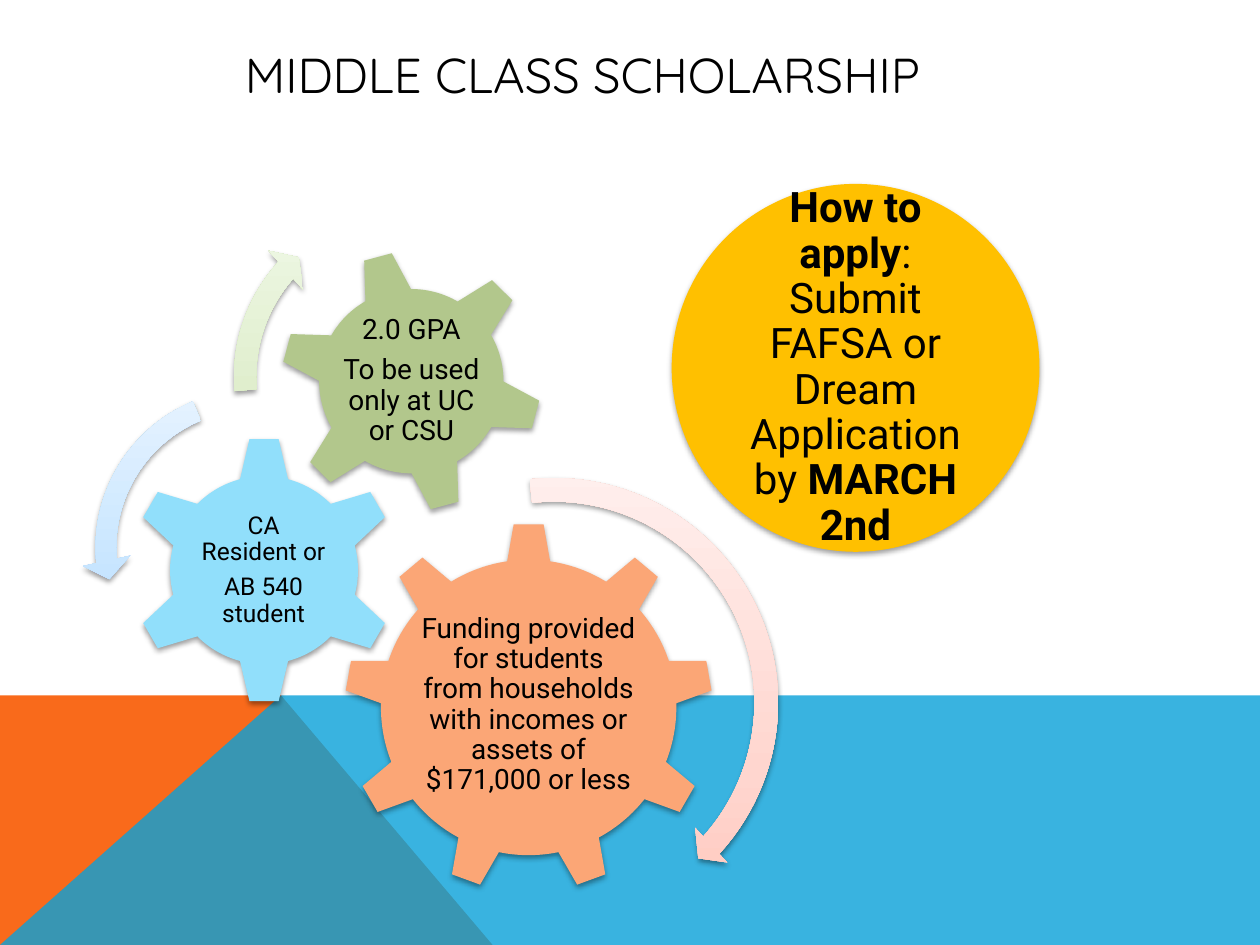
from dataclasses import dataclass

from lxml import etree
from pptx import Presentation
from pptx.dml.color import RGBColor
from pptx.enum.shapes import MSO_SHAPE
from pptx.enum.text import MSO_ANCHOR, PP_ALIGN
from pptx.oxml.ns import qn
from pptx.util import Pt

CENTER = PP_ALIGN.CENTER
MIDDLE = MSO_ANCHOR.MIDDLE
GEAR_6, GEAR_9 = MSO_SHAPE.GEAR_6, MSO_SHAPE.GEAR_9
ARROW_RIGHT = MSO_SHAPE.CIRCULAR_ARROW
ARROW_LEFT = MSO_SHAPE.LEFT_CIRCULAR_ARROW
OVAL = MSO_SHAPE.OVAL

WIDTH, HEIGHT = 720, 540
COLORS = {
    "text": "000000",
    "shadow": "000000",
    "orange band": "F96A1B",
    "blue band": "08A1D9",
    "orange gear": "FBA676",
    "blue gear": "91DFFB",
    "green gear": "B2C78C",
    "circle": "FFC000",
}
GRADIENT_STOPS = (0, 35, 100)
GRADIENTS = {
    "pink": ("FFC5BA", "FFD6CF", "FFEFED"),
    "blue": ("ABD8FF", "C3E3FF", "E8F4FF"),
    "green": ("CDE6AF", "DCECC7", "F1F9E9"),
}


@dataclass
class Disc:
    """A square-framed shape."""
    kind: int
    left: float
    top: float
    size: float
    color: str
    rotation: float = 0


@dataclass
class Label:
    """Paragraphs of (text, bold) runs in a box."""
    left: float
    top: float
    width: float
    height: float
    font_size: float
    paragraphs: list
    inset: float = 1.5


@dataclass
class Arrow:
    kind: int
    left: float
    top: float
    size: float
    gradient: str
    adjustments: tuple


GEARS = [
    (Disc(GEAR_9, 196.6, 298.8, 211, "orange gear"),
     Label(239, 348.5, 126, 108.7, 16,
           [[("Funding provided for students from households with incomes "
              "or assets of $171,000 or less", False)]])),
    (Disc(GEAR_6, 74.2, 249.1, 153.4, "blue gear"),
     Label(112.5, 288, 76.3, 75.6, 14,
           [[("CA Resident or", False)], [("AB 540 student", False)]])),
    (Disc(GEAR_6, 159.8, 142.6, 150.5, "green gear", 345),
     Label(193, 175.7, 84.2, 84.2, 16,
           [[("2.0 GPA", False)], [("To be used only at UC or CSU", False)]])),
]
ARROWS = [
    Arrow(ARROW_RIGHT, 181.4, 266.4, 270, "pink", (0.05, 2.99, 25.3, 158.31, 0.05)),
    Arrow(ARROW_LEFT, 46.8, 214.6, 196.6, "blue", (0.06, 4.3, 104.89, 148.38, 0.07)),
    Arrow(ARROW_RIGHT, 125.3, 109.4, 211.7, "green", (0.06, 3.94, 133.14, 105.08, 0.07)),
]
CIRCLE = (
    Disc(OVAL, 383.8, 105.1, 210.2, "circle"),
    Label(414.7, 136.1, 148.3, 148.3, 24,
          [[("How to apply", True),
            (": Submit FAFSA or Dream Application by ", False),
            ("MARCH 2nd", True)]], 2.2),
)


def add_color(parent, color: str, alpha: int = 100) -> None:
    node = etree.SubElement(parent, qn("a:srgbClr"), val=color)
    if alpha < 100:
        etree.SubElement(node, qn("a:alpha"), val=str(alpha * 1000))


def add_shadow(shape) -> None:
    shape.shadow.inherit = False
    effects = shape.element.spPr.find(qn("a:effectLst"))
    shadow = etree.SubElement(
        effects, qn("a:outerShdw"), blurRad=str(Pt(3.1)), dist=str(Pt(1.6)),
        dir=str(90 * 60000), rotWithShape="0")
    add_color(shadow, COLORS["shadow"], 38)


def add_band(slide, points: list, color: str, alpha: int = 100) -> None:
    corners = [(Pt(x), Pt(y)) for x, y in points]
    builder = slide.shapes.build_freeform(*corners[0])
    builder.add_line_segments(corners[1:], close=True)
    shape = builder.convert_to_shape()
    shape.shadow.inherit = False
    shape.line.fill.background()
    shape.fill.solid()
    shape.fill.fore_color.rgb = RGBColor.from_string(COLORS[color])
    if alpha < 100:
        node = shape.element.spPr.find(qn("a:solidFill"))
        node.clear()
        add_color(node, COLORS[color], alpha)


def add_square_shape(slide, part):
    shape = slide.shapes.add_shape(
        part.kind, Pt(part.left), Pt(part.top), Pt(part.size), Pt(part.size))
    shape.line.fill.background()
    add_shadow(shape)
    return shape


def add_disc(slide, disc: Disc) -> None:
    shape = add_square_shape(slide, disc)
    shape.rotation = disc.rotation
    shape.fill.solid()
    shape.fill.fore_color.rgb = RGBColor.from_string(COLORS[disc.color])


def add_arrow(slide, arrow: Arrow) -> None:
    shape = add_square_shape(slide, arrow)
    for index, value in enumerate(arrow.adjustments):
        shape.adjustments[index] = value
    shape.fill.gradient()
    shape.fill.gradient_angle = 90
    stops = shape.element.spPr.find(qn("a:gradFill")).find(qn("a:gsLst"))
    stops.clear()
    for position, color in zip(GRADIENT_STOPS, GRADIENTS[arrow.gradient]):
        stop = etree.SubElement(stops, qn("a:gs"), pos=str(position * 1000))
        add_color(stop, color)


def format_run(run, font: str, size: float, bold: bool = False) -> None:
    run.font.name = font
    run.font.size = Pt(size)
    run.font.bold = bold
    run.font.color.rgb = RGBColor.from_string(COLORS["text"])


def add_frame(slide, left: float, top: float, width: float, height: float):
    box = slide.shapes.add_textbox(Pt(left), Pt(top), Pt(width), Pt(height))
    text_frame = box.text_frame
    text_frame.word_wrap = True
    text_frame.vertical_anchor = MIDDLE
    return text_frame


def add_label(slide, label: Label) -> None:
    text_frame = add_frame(slide, label.left, label.top, label.width, label.height)
    text_frame.margin_left = text_frame.margin_right = Pt(label.inset)
    text_frame.margin_top = text_frame.margin_bottom = Pt(label.inset)
    for index, runs in enumerate(label.paragraphs):
        paragraph = text_frame.add_paragraph() if index else text_frame.paragraphs[0]
        paragraph.alignment = CENTER
        paragraph.line_spacing = 0.9
        paragraph.space_after = Pt(0.35 * label.font_size)
        for text, bold in runs:
            run = paragraph.add_run()
            run.text = text
            format_run(run, "Roboto", label.font_size, bold)


def main() -> None:
    presentation = Presentation()
    presentation.slide_width, presentation.slide_height = Pt(WIDTH), Pt(HEIGHT)
    slide = presentation.slides.add_slide(presentation.slide_layouts[6])

    # Coloured bands at the bottom
    band_top, peak = 397.4, 160.6
    add_band(slide, [(0, HEIGHT), (0, band_top), (peak, band_top), (281.5, HEIGHT)],
             "orange band")
    add_band(slide, [(0, HEIGHT), (peak, band_top), (WIDTH, band_top), (WIDTH, HEIGHT)],
             "blue band", 80)

    # Title
    title = add_frame(slide, 0.7, 12.2, 671.8, 59.8)
    title.text = "MIDDLE CLASS SCHOLARSHIP "
    title.paragraphs[0].alignment = CENTER
    format_run(title.paragraphs[0].runs[0], "Quicksand", 28)

    # Gears, their arrows, and the call to apply
    for gear, label in GEARS:
        add_disc(slide, gear)
        add_label(slide, label)
    for arrow in ARROWS:
        add_arrow(slide, arrow)
    circle, label = CIRCLE
    add_disc(slide, circle)
    add_label(slide, label)

    presentation.save("out.pptx")


if __name__ == "__main__":
    main()
